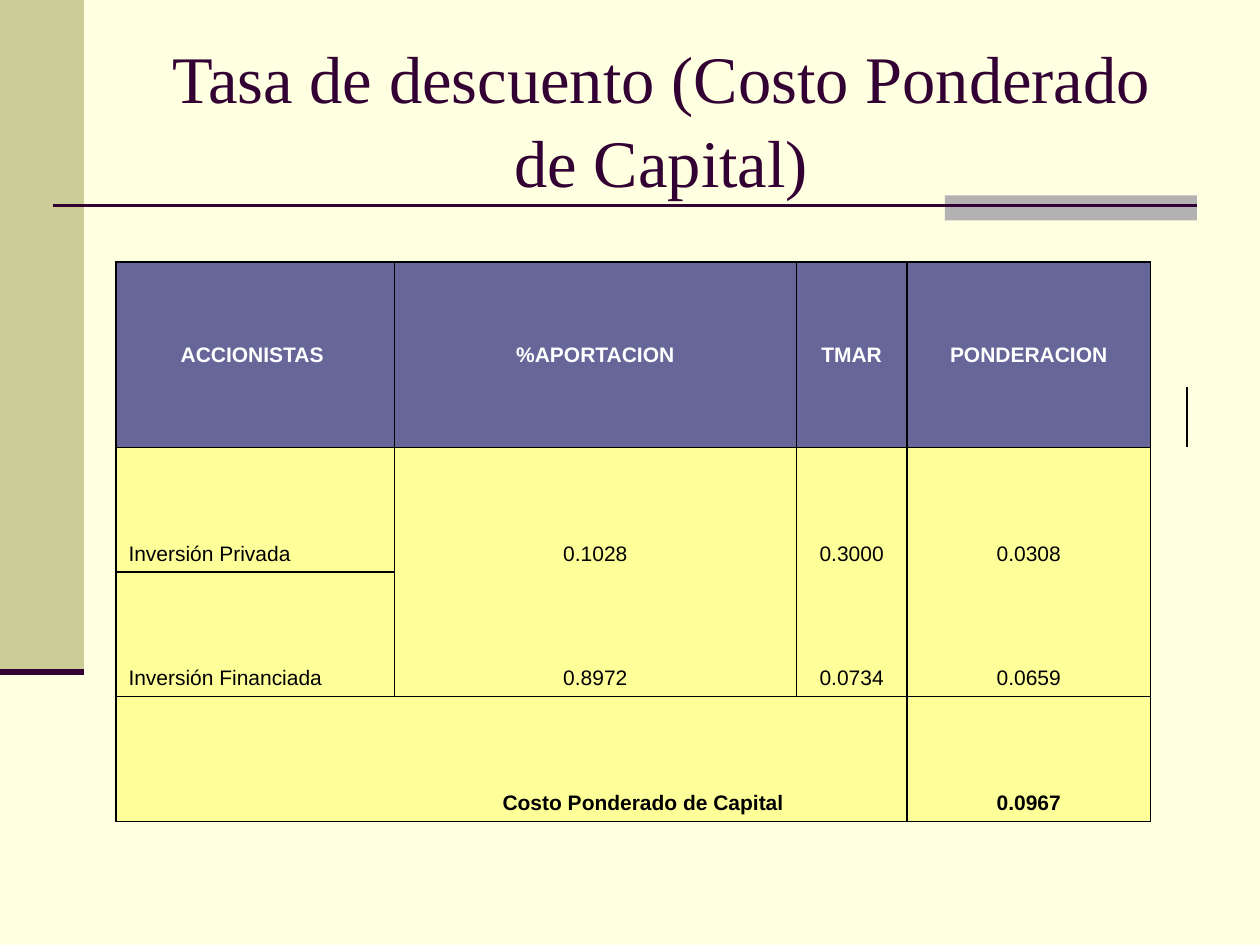
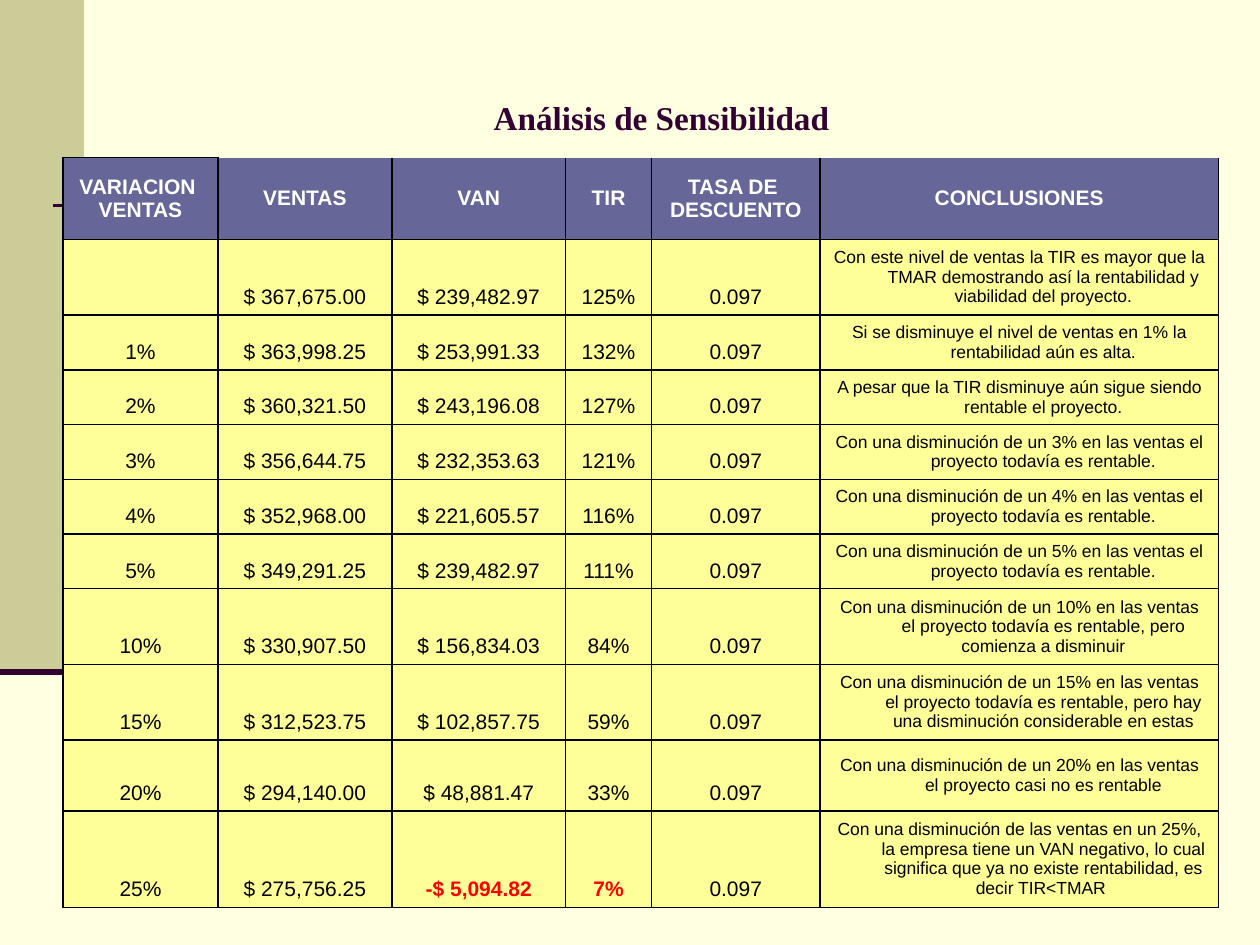
from pptx import Presentation
from pptx.dml.color import RGBColor
from pptx.enum.shapes import MSO_CONNECTOR, MSO_SHAPE
from pptx.enum.text import MSO_ANCHOR, PP_ALIGN
from pptx.oxml.ns import qn
from pptx.util import Inches, Pt
from lxml import etree

RECT = MSO_SHAPE.RECTANGLE
LINE = MSO_CONNECTOR.STRAIGHT
LEFT, MID, RIGHT = PP_ALIGN.LEFT, PP_ALIGN.CENTER, PP_ALIGN.RIGHT
CENTER, BOTTOM = MSO_ANCHOR.MIDDLE, MSO_ANCHOR.BOTTOM
WIDE, HIGH = 10, 7.5
SANS, SERIF = "Arial", "Times New Roman"
HANG = Inches(0.38)
ALL = "LRTB"
INK = {
    "paper": "FFFFE1", "band": "CCCC99", "tab": "B2B2B2", "plum": "330033",
    "head": "666699", "body": "FFFF99", "white": "FFFFFF", "black": "000000",
    "red": "FF0000",
}

CAPITAL = [
    ["ACCIONISTAS ", "%APORTACION", "TMAR", "PONDERACION", ""],
    [""] * 5,
    ["Inversión Privada", "0.1028", "0.3000", "0.0308", ""],
    ["Inversión Financiada", "0.8972", "0.0734", "0.0659", ""],
    ["", "Costo Ponderado de Capital", "", "0.0967", ""],
]
EDGES = [
    [ALL, ALL, ALL, ALL, "L"],
    [ALL, ALL, ALL, ALL, "LR"],
    [ALL, "LRT", "LRT", "LRT", "L"],
    [ALL, "LRB", "LRB", "LRB", "L"],
    ["LTB", "TB", "RTB", ALL, "L"],
]
RATE = "0.097"
DROP = "Con una disminución de un {} en las ventas el proyecto {}"
STILL = "todavía es rentable"
HEADS = ["VARIACION \nVENTAS", "VENTAS", "VAN", "TIR",
         "TASA DE \nDESCUENTO", "CONCLUSIONES"]
CASES = [
    ("", "$ 367,675.00", "$ 239,482.97", "125%",
     "Con este nivel de ventas la TIR es mayor que la TMAR demostrando así "
     "la rentabilidad y viabilidad del proyecto."),
    ("1%", "$ 363,998.25", "$ 253,991.33", "132%",
     "Si se disminuye el nivel de ventas en 1% la rentabilidad aún es alta."),
    ("2%", "$ 360,321.50", "$ 243,196.08", "127%",
     "A pesar que la TIR disminuye aún sigue siendo rentable el proyecto."),
    ("3%", "$ 356,644.75", "$ 232,353.63", "121%",
     DROP.format("3%", STILL + ".")),
    ("4%", "$ 352,968.00", "$ 221,605.57", "116%",
     DROP.format("4%", STILL + ".")),
    ("5%", "$ 349,291.25", "$ 239,482.97", "111%",
     DROP.format("5%", STILL + ".")),
    ("10%", "$ 330,907.50", "$ 156,834.03", "84%",
     DROP.format("10%", STILL + ", pero comienza a disminuir")),
    ("15%", "$ 312,523.75", "$ 102,857.75", "59%",
     DROP.format("15%", STILL + ", pero hay una disminución considerable en estas")),
    ("20%", "$ 294,140.00", "$ 48,881.47", "33%",
     DROP.format("20%", "casi no es rentable")),
    ("25%", "$ 275,756.25", "-$ 5,094.82", "7%",
     "Con una disminución de las ventas en un 25%, la empresa tiene un VAN "
     "negativo, lo cual significa que ya no existe rentabilidad, es decir "
     "TIR<TMAR "),
]


def tint(name):
    return RGBColor.from_string(INK[name])


def style(par, face, size, color, bold=False, align=MID):
    par.alignment = align
    par.font.name = face
    par.font.size = Pt(size)
    par.font.bold = bold
    par.font.color.rgb = tint(color)


def block(slide, x, y, w, h, color):
    box = slide.shapes.add_shape(RECT, *map(Inches, (x, y, w, h)))
    box.shadow.inherit = False
    box.fill.solid()
    box.fill.fore_color.rgb = tint(color)
    box.line.fill.background()


def rule(slide, x, end, y, width):
    line = slide.shapes.add_connector(LINE, *map(Inches, (x, y, end, y)))
    line.line.color.rgb = tint("plum")
    line.line.width = Pt(width)
    etree.SubElement(line._element.spPr, qn("a:effectLst"))


def title(slide, text, size, bold=False):
    box = slide.shapes.add_textbox(*map(Inches, (1, 0.3, 8.5, 1.25)))
    frame = box.text_frame
    frame.word_wrap = True
    frame.vertical_anchor = CENTER
    frame.text = text
    par = frame.paragraphs[0]
    par.line_spacing = 1.05
    style(par, SERIF, size, "plum", bold)


def page(deck, text, size, bold=False):
    slide = deck.slides.add_slide(deck.slide_layouts[6])
    block(slide, 0, 0, WIDE / 15, 5.33, "band")
    block(slide, 0.75 * WIDE, 1.55, 0.2 * WIDE, 0.2, "tab")
    rule(slide, 0.42, 0.95 * WIDE, 1.63, 1.5)
    rule(slide, 0, WIDE / 15, 5.33, 3.5)
    title(slide, text, size, bold)
    return slide


def grid(slide, x, y, cols, rows):
    frame = slide.shapes.add_table(
        len(rows), len(cols), Inches(x), Inches(y),
        Inches(sum(cols)), Inches(sum(rows)))
    table = frame.table
    table.first_row = table.horz_banding = False
    for col, wide in zip(table.columns, cols):
        col.width = Inches(wide)
    for row, high in zip(table.rows, rows):
        row.height = Inches(high)
    return table


def border(cell, edges):
    props = cell._tc.get_or_add_tcPr()
    for side in ALL:
        line = etree.SubElement(props, qn("a:ln" + side), w=str(Pt(1)))
        if side in edges:
            fill = etree.SubElement(line, qn("a:solidFill"))
            etree.SubElement(fill, qn("a:srgbClr"), val=INK["black"])
        else:
            etree.SubElement(line, qn("a:noFill"))


def fill(cell, text, back, edges=ALL, size=12, color="black", bold=False,
         align=MID, anchor=BOTTOM):
    border(cell, edges)
    if back:
        cell.fill.solid()
        cell.fill.fore_color.rgb = tint(back)
    else:
        cell.fill.background()
    cell.vertical_anchor = anchor
    if not text:
        return
    cell.text = text
    for par in cell.text_frame.paragraphs:
        style(par, SANS, size, color, bold, align)
        props = par._p.get_or_add_pPr()
        props.set("marL", str(HANG))
        props.set("indent", str(-HANG))


def head(cell, text, edges=ALL):
    fill(cell, text, "head", edges, color="white", bold=True, anchor=CENTER)


def capital(deck):
    slide = page(deck, "Tasa de descuento (Costo Ponderado de Capital)", 38)
    table = grid(slide, 0.92, 2.08, [2.21, 3.19, 0.88, 1.93, 0.29],
                 [0.99, 0.48, 0.99, 0.99, 0.99])
    for r, texts in enumerate(CAPITAL):
        for c, text in enumerate(texts):
            cell, edges = table.cell(r, c), EDGES[r][c]
            if c == 4:
                fill(cell, text, None, edges)
            elif r < 2:
                head(cell, text, edges)
            else:
                last = r == 4
                align = LEFT if c == 0 else RIGHT if last and c == 1 else MID
                fill(cell, text, "body", edges, bold=last, align=align)
    for c in range(4):
        table.cell(0, c).merge(table.cell(1, c))


def cases(deck):
    slide = page(deck, "Análisis de Sensibilidad", 19, True)
    table = grid(slide, 0.5, 1.25, [1.23, 1.38, 1.38, 0.68, 1.34, 3.16],
                 [0.65, 0.6] + [0.43] * 5 + [0.6, 0.6, 0.56, 0.76])
    for c, text in enumerate(HEADS):
        head(table.cell(0, c), text, "LRB" if c else ALL)
    for r, (*facts, note) in enumerate(CASES, 1):
        loss = facts[2].startswith("-")
        for c, text in enumerate(facts + [RATE]):
            bad = loss and c in (2, 3)
            fill(table.cell(r, c), text, "body",
                 color="red" if bad else "black", bold=bad)
        fill(table.cell(r, 5), note, "body", size=10, anchor=CENTER)


def main():
    deck = Presentation()
    deck.slide_width, deck.slide_height = Inches(WIDE), Inches(HIGH)
    back = deck.slide_master.background.fill
    back.solid()
    back.fore_color.rgb = tint("paper")
    capital(deck)
    cases(deck)
    deck.save("out.pptx")


if __name__ == "__main__":
    main()
